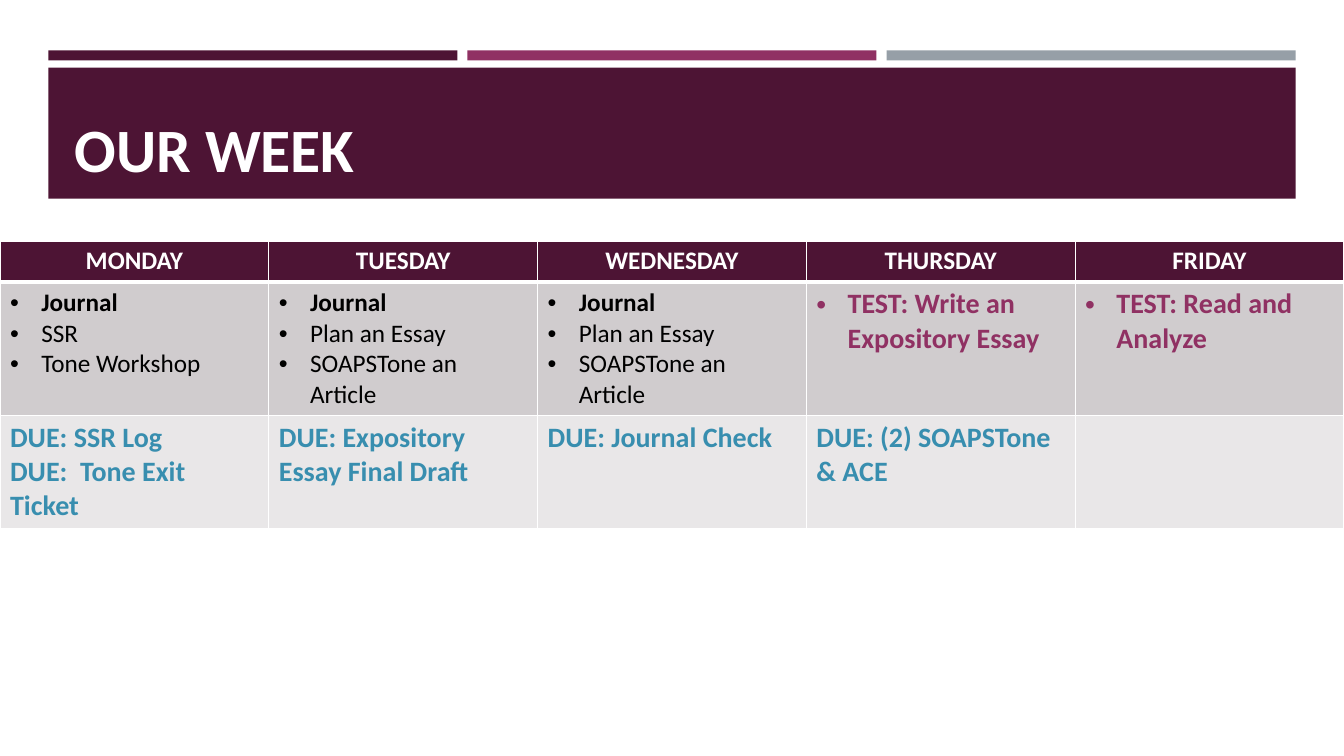
from lxml.etree import SubElement
from pptx import Presentation
from pptx.dml.color import RGBColor
from pptx.enum.shapes import MSO_SHAPE
from pptx.enum.text import MSO_ANCHOR, MSO_AUTO_SIZE, PP_ALIGN
from pptx.oxml.ns import qn
from pptx.util import Inches, Pt

COLORS = {
    "plum": "4D1434",
    "magenta": "903163",
    "slate": "969FA7",
    "white": "FFFFFF",
    "black": "000000",
    "due": "388EAF",
    "activity_row": "D0CCCE",
    "due_row": "E9E7E8",
}
DAYS = ["MONDAY", "TUESDAY", "WEDNESDAY", "THURSDAY", "FRIDAY"]
ESSAY_DAY = ["Journal", "Plan an Essay", "SOAPSTone an Article"]
ACTIVITIES = [
    ["Journal", "SSR", "Tone Workshop"],
    ESSAY_DAY,
    ESSAY_DAY,
    ["TEST: Write an Expository Essay"],
    ["TEST: Read and Analyze"],
]
DUE_ITEMS = [
    ["DUE: SSR Log", "DUE:  Tone Exit Ticket"],
    ["DUE: Expository Essay Final Draft"],
    ["DUE: Journal Check"],
    ["DUE: (2) SOAPSTone & ACE"],
    [],
]
ROW_HEIGHTS = [0.41, 1.31, 1.12]


def rgb(name):
    return RGBColor.from_string(COLORS[name])


def write(paragraph, text, size=18, color="black", bold=False,
          align=PP_ALIGN.LEFT, bullet=False):
    paragraph.alignment = align
    run = paragraph.add_run()
    run.text = text
    run.font.name = "Calibri"
    run.font.size = Pt(size)
    run.font.bold = bold
    run.font.color.rgb = rgb(color)
    if bullet:
        properties = paragraph._p.get_or_add_pPr()
        properties.set("marL", str(Inches(0.31)))
        properties.set("indent", str(-Inches(0.31)))
        SubElement(properties, qn("a:buFont"), typeface="Arial")
        SubElement(properties, qn("a:buChar"), char="•")


def add_bar(slide, left, top, width, height, color):
    bar = slide.shapes.add_shape(
        MSO_SHAPE.RECTANGLE, Inches(left), Inches(top), Inches(width), Inches(height))
    bar.shadow.inherit = False
    bar.fill.solid()
    bar.fill.fore_color.rgb = rgb(color)
    bar.line.fill.background()


def add_header(slide, left, top, width, height):
    gap = 0.1
    stripe_width = (width - 2 * gap) / 3
    for index, color in enumerate(["plum", "magenta", "slate"]):
        add_bar(slide, left + index * (stripe_width + gap), top, stripe_width, 0.1, color)
    band_top = top + 0.17
    band_height = height - 0.17
    add_bar(slide, left, band_top, width, band_height, "plum")

    title = slide.shapes.title
    title.left, title.top = Inches(left + 0.16), Inches(band_top + 0.1)
    title.width, title.height = Inches(width - 0.31), Inches(band_height - 0.19)
    title.text_frame.word_wrap = True
    title.text_frame.auto_size = MSO_AUTO_SIZE.NONE
    title.text_frame.vertical_anchor = MSO_ANCHOR.BOTTOM
    write(title.text_frame.paragraphs[0], "OUR WEEK", size=44, color="white", bold=True)
    slide.shapes.element.append(title.element)


def set_borders(cell, top=1, bottom=1):
    properties = cell._tc.get_or_add_tcPr()
    for side, points in [("L", 1), ("R", 1), ("T", top), ("B", bottom)]:
        border = SubElement(properties, qn(f"a:ln{side}"), w=str(Pt(points)))
        fill = SubElement(border, qn("a:solidFill"))
        SubElement(fill, qn("a:srgbClr"), val=COLORS["white"])


def fill_cell(cell, lines, background, **borders):
    set_borders(cell, **borders)
    cell.fill.solid()
    cell.fill.fore_color.rgb = rgb(background)
    frame = cell.text_frame
    for index, (text, style) in enumerate(lines):
        paragraph = frame.add_paragraph() if index else frame.paragraphs[0]
        write(paragraph, text, **style)


def activity_style(text):
    if text.startswith("TEST"):
        return dict(size=20, color="magenta", bold=True, bullet=True)
    return dict(bold=text == "Journal", bullet=True)


def add_week_table(slide, left, top, width):
    table = slide.shapes.add_table(
        len(ROW_HEIGHTS), len(DAYS), Inches(left), Inches(top),
        Inches(width), Inches(sum(ROW_HEIGHTS))).table
    for row, height in zip(table.rows, ROW_HEIGHTS):
        row.height = Inches(height)
    day_style = dict(color="white", bold=True, align=PP_ALIGN.CENTER)
    due_style = dict(size=20, color="due", bold=True)
    for column, (day, activities, due) in enumerate(zip(DAYS, ACTIVITIES, DUE_ITEMS)):
        fill_cell(table.cell(0, column), [(day, day_style)], "plum", bottom=3)
        fill_cell(table.cell(1, column),
                  [(text, activity_style(text)) for text in activities],
                  "activity_row", top=3)
        fill_cell(table.cell(2, column), [(text, due_style) for text in due], "due_row")


def main():
    presentation = Presentation()
    presentation.slide_width = Inches(13.33)
    presentation.slide_height = Inches(7.5)
    slide = presentation.slides.add_slide(presentation.slide_layouts[5])
    add_header(slide, 0.48, 0.5, 12.37, 1.47)
    add_week_table(slide, 0, 2.39, 13.33)
    presentation.save("out.pptx")


if __name__ == "__main__":
    main()
